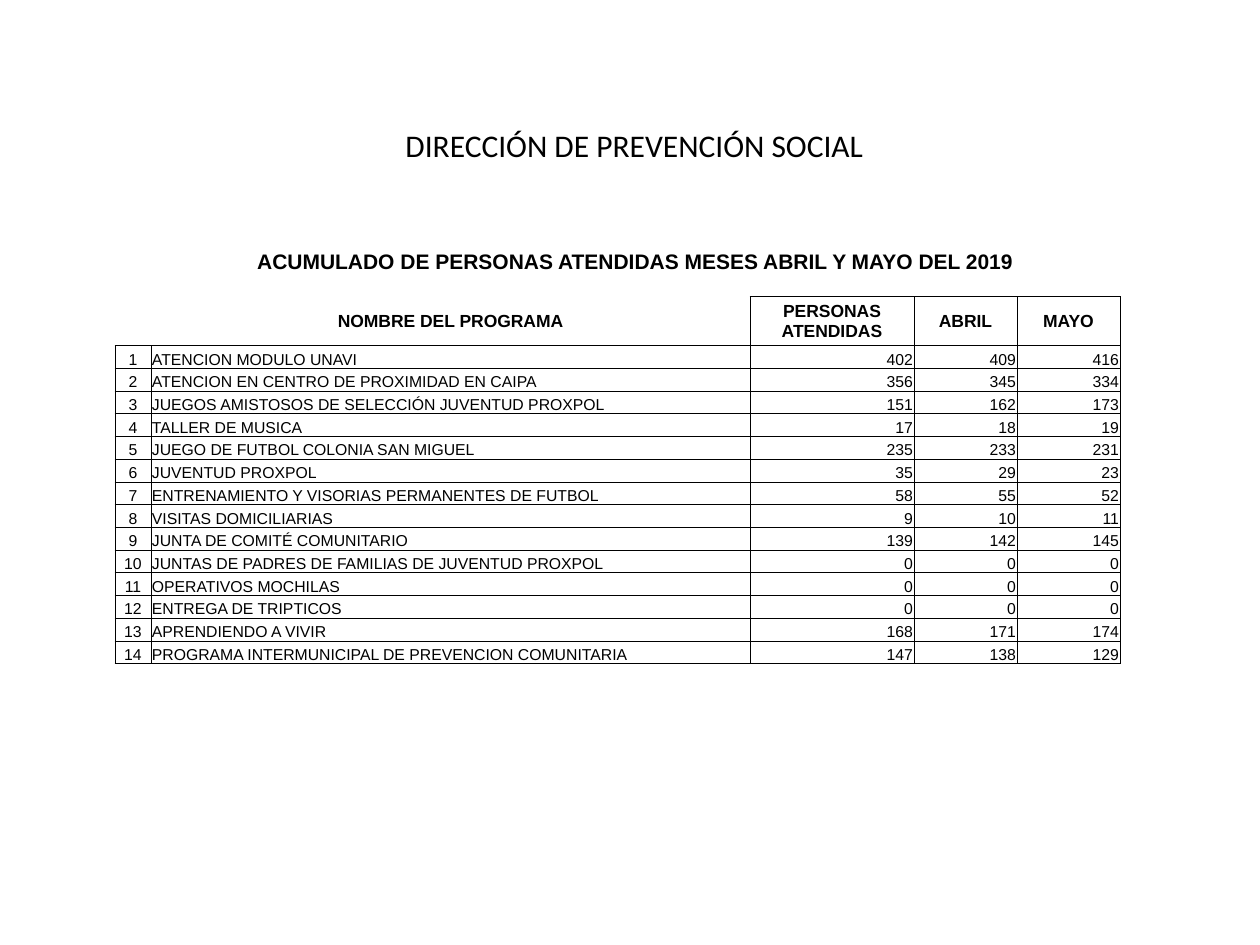
from lxml.etree import SubElement
from pptx import Presentation
from pptx.dml.color import RGBColor
from pptx.enum.text import MSO_ANCHOR as Anchor, MSO_AUTO_SIZE as AutoSize, PP_ALIGN as Align
from pptx.oxml.ns import qn
from pptx.util import Emu, Pt

BLACK = RGBColor(0x00, 0x00, 0x00)
PLAIN_STYLE = "{2D5ABB26-0587-4C30-8999-92F81FD0307C}"  # no style, no grid

HEADINGS = ["", "NOMBRE DEL PROGRAMA", "PERSONAS ATENDIDAS", "ABRIL", "MAYO"]
PROGRAMS = [
    ("ATENCION MODULO UNAVI", 402, 409, 416),
    ("ATENCION EN CENTRO DE PROXIMIDAD EN CAIPA", 356, 345, 334),
    ("JUEGOS AMISTOSOS DE SELECCIÓN JUVENTUD PROXPOL", 151, 162, 173),
    ("TALLER DE MUSICA", 17, 18, 19),
    ("JUEGO DE FUTBOL COLONIA SAN MIGUEL", 235, 233, 231),
    ("JUVENTUD PROXPOL", 35, 29, 23),
    ("ENTRENAMIENTO Y VISORIAS PERMANENTES DE FUTBOL", 58, 55, 52),
    ("VISITAS DOMICILIARIAS", 9, 10, 11),
    ("JUNTA DE COMITÉ COMUNITARIO", 139, 142, 145),
    ("JUNTAS DE PADRES DE FAMILIAS DE JUVENTUD PROXPOL", 0, 0, 0),
    ("OPERATIVOS MOCHILAS", 0, 0, 0),
    ("ENTREGA DE TRIPTICOS", 0, 0, 0),
    ("APRENDIENDO A VIVIR", 168, 171, 174),
    ("PROGRAMA INTERMUNICIPAL DE PREVENCION COMUNITARIA", 147, 138, 129),
]
CAPTION_ROW, HEADING_ROW, FIRST_PROGRAM_ROW = 0, 2, 3
COLUMN_WIDTHS = [36, 599, 164, 103, 103]
CAPTION_HEIGHT, HEADING_HEIGHT, TABLE_HEIGHT = 28, 49, 418


def px(length):
    """Turn pixels, 126 to the inch, into EMU."""
    return Emu(round(length * 914400 / 126))


def is_ruled(row, column):
    """Tell whether the cell at this place has lines on all four sides."""
    inside = row < len(rows) and 0 <= column < len(COLUMN_WIDTHS)
    return inside and (row >= FIRST_PROGRAM_ROW or row == HEADING_ROW and column >= 2)


presentation = Presentation()
presentation.slide_width, presentation.slide_height = px(1260), px(945)
slide = presentation.slides.add_slide(presentation.slide_layouts[5])

title = slide.shapes.title
title.left, title.top, title.width, title.height = px(203), px(120), px(863), px(51)
title.text_frame.text = "DIRECCIÓN DE PREVENCIÓN SOCIAL"
title.text_frame.auto_size = AutoSize.SHAPE_TO_FIT_TEXT
title.text_frame.vertical_anchor = Anchor.TOP
paragraph = title.text_frame.paragraphs[0]
paragraph.alignment = Align.CENTER
paragraph.font.name = "Calibri"
paragraph.font.size = Pt(18)
paragraph.font.color.rgb = BLACK

rows = [
    ["", "ACUMULADO DE PERSONAS ATENDIDAS MESES ABRIL Y MAYO DEL 2019", "", "", ""],
    [""] * len(HEADINGS),
    HEADINGS,
]
rows += [(number, *program) for number, program in enumerate(PROGRAMS, start=1)]

frame = slide.shapes.add_table(len(rows), len(COLUMN_WIDTHS), px(115), px(246),
                               px(sum(COLUMN_WIDTHS)), px(TABLE_HEIGHT))
table = frame.table
table.first_row = table.horz_banding = False
table._tbl.tblPr.find(qn("a:tableStyleId")).text = PLAIN_STYLE
for column, width in zip(table.columns, COLUMN_WIDTHS):
    column.width = px(width)
small_height = (TABLE_HEIGHT - CAPTION_HEIGHT - HEADING_HEIGHT) / (len(rows) - 2)
for row in table.rows:
    row.height = px(small_height)
table.rows[CAPTION_ROW].height = px(CAPTION_HEIGHT)
table.rows[HEADING_ROW].height = px(HEADING_HEIGHT)
table.cell(CAPTION_ROW, 1).merge(table.cell(CAPTION_ROW, 4))

for r, values in enumerate(rows):
    for c, value in enumerate(values):
        cell = table.cell(r, c)
        cell.margin_left = cell.margin_top = cell.margin_right = px(1)
        cell.margin_bottom = 0
        cell.vertical_anchor = Anchor.MIDDLE if r == HEADING_ROW else Anchor.BOTTOM

        neighbours = {"L": (r, c - 1), "R": (r, c + 1), "T": (r - 1, c), "B": (r + 1, c)}
        for side, neighbour in neighbours.items():
            line = SubElement(cell._tc.get_or_add_tcPr(), qn(f"a:ln{side}"), w=str(Pt(0.5)))
            if is_ruled(r, c) or is_ruled(*neighbour):
                fill = SubElement(line, qn("a:solidFill"))
                SubElement(fill, qn("a:srgbClr"), val=str(BLACK))
            else:
                SubElement(line, qn("a:noFill"))
        cell.fill.background()

        paragraph = cell.text_frame.paragraphs[0]
        if value != "":
            paragraph.text = str(value)
        if r < FIRST_PROGRAM_ROW or c == 0:
            paragraph.alignment = Align.CENTER
        else:
            paragraph.alignment = Align.LEFT if c == 1 else Align.RIGHT
        paragraph.font.name = "Arial"
        paragraph.font.size = Pt({CAPTION_ROW: 12, HEADING_ROW: 10}.get(r, 9))
        paragraph.font.bold = r < FIRST_PROGRAM_ROW
        paragraph.font.color.rgb = BLACK

presentation.save("out.pptx")
